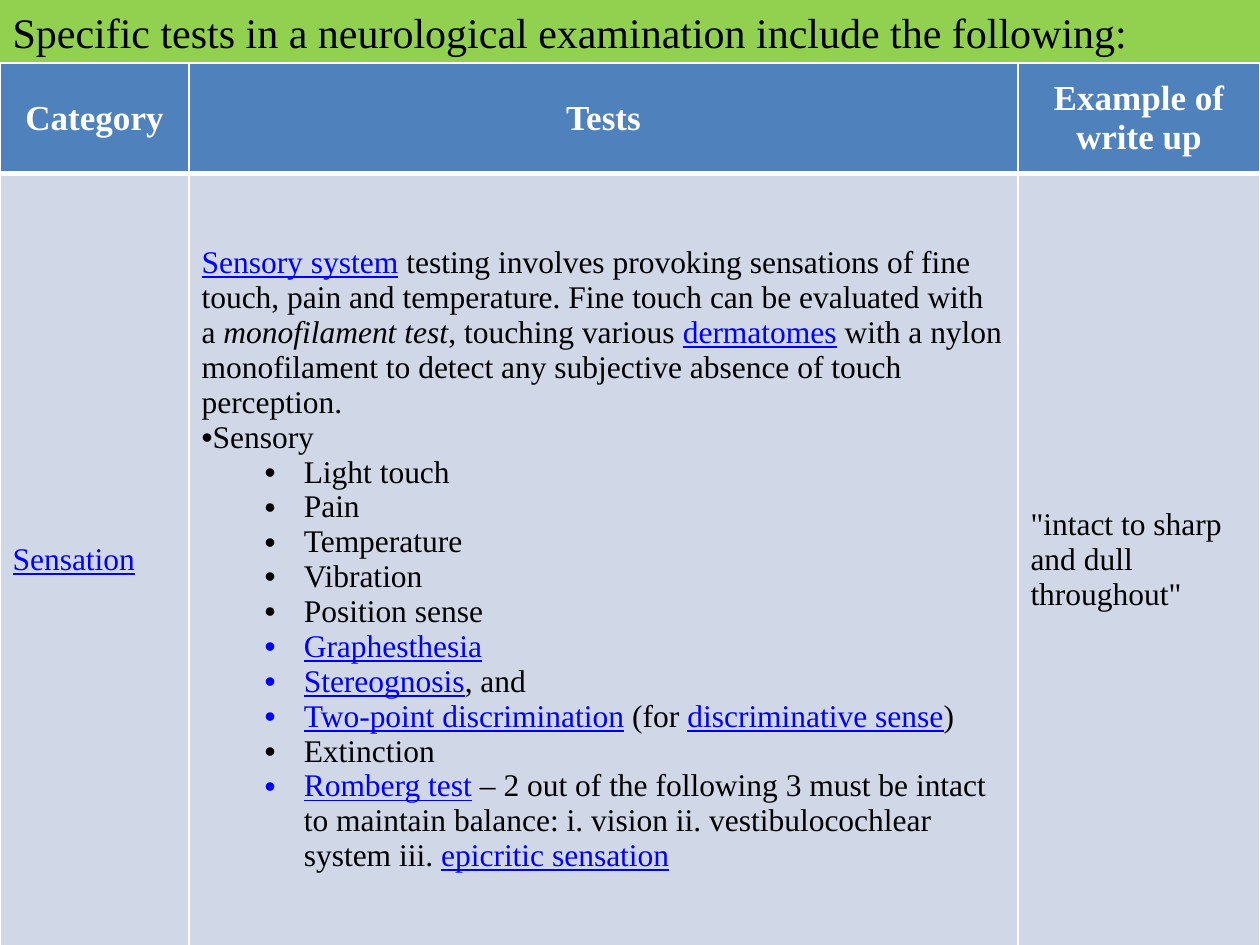
"""Build a slide with a table of sensory tests in a neurological examination."""
from dataclasses import dataclass

from lxml.etree import SubElement
from pptx import Presentation
from pptx.dml.color import RGBColor
from pptx.enum.text import MSO_ANCHOR, MSO_AUTO_SIZE, PP_ALIGN
from pptx.oxml.ns import qn
from pptx.util import Cm, Pt

FONT = "Times New Roman"
BLACK = RGBColor(0x00, 0x00, 0x00)
WHITE = RGBColor(0xFF, 0xFF, 0xFF)
GREEN = RGBColor(0x92, 0xD0, 0x50)
BLUE = RGBColor(0x4F, 0x81, 0xBD)
PALE = RGBColor(0xD0, 0xD8, 0xE8)
LINK = RGBColor(0x00, 0x00, 0xFF)


@dataclass
class Piece:
    text: str
    link: bool = False
    italic: bool = False


@dataclass
class Para:
    pieces: list[Piece]
    level: int = 0
    bullet: bool = False


def linked(text: str) -> Piece:
    return Piece(text, link=True)


def item(*pieces: Piece) -> Para:
    return Para(list(pieces), level=1, bullet=True)


def plain_items(*names: str) -> list[Para]:
    return [item(Piece(name)) for name in names]


HEADERS = ["Category", "Tests", "Example of write up"]
TESTS = [
    Para([
        linked("Sensory system"),
        Piece(" testing involves provoking sensations of fine touch, pain and "
              "temperature. Fine touch can be evaluated with a "),
        Piece("monofilament test", italic=True),
        Piece(", touching various "),
        linked("dermatomes"),
        Piece(" with a nylon monofilament to detect any subjective absence of "
              "touch perception."),
    ]),
    Para([Piece("Sensory")], bullet=True),
    *plain_items("Light touch", "Pain", "Temperature", "Vibration", "Position sense"),
    item(linked("Graphesthesia")),
    item(linked("Stereognosis"), Piece(", and")),
    item(linked("Two-point discrimination"), Piece(" (for "),
         linked("discriminative sense"), Piece(")")),
    *plain_items("Extinction"),
    item(linked("Romberg test"),
         Piece(" – 2 out of the following 3 must be intact to maintain balance: "
               "i. vision ii. vestibulocochlear system iii. "),
         linked("epicritic sensation")),
]
BODY = [
    [Para([linked("Sensation")])],
    TESTS,
    [Para([Piece('"intact to sharp and dull throughout"')])],
]


def add_text(p, text: str, *, size: int = 18, color: RGBColor = BLACK,
             bold: bool = False, italic: bool = False, underline: bool = False) -> None:
    r = p.add_run()
    r.text = text
    f = r.font
    f.name, f.size, f.bold, f.italic, f.underline = FONT, Pt(size), bold, italic, underline
    f.color.rgb = color


def add_bullet(p, level: int) -> None:
    pPr = p._p.get_or_add_pPr()
    pPr.set("marL", str(Cm(2.06) * level))
    pPr.set("indent", str(Cm(-0.79) * level))
    SubElement(pPr, qn("a:buFont"), typeface="Arial")
    SubElement(pPr, qn("a:buChar"), char="•")


def style_cell(cell, fill: RGBColor, top: int, bottom: int) -> None:
    tcPr = cell._tc.get_or_add_tcPr()
    for side, width in (("L", 1), ("R", 1), ("T", top), ("B", bottom)):
        ln = SubElement(tcPr, qn(f"a:ln{side}"), w=str(Pt(width)))
        SubElement(SubElement(ln, qn("a:solidFill")), qn("a:srgbClr"), val=str(WHITE))
    cell.fill.solid()
    cell.fill.fore_color.rgb = fill
    cell.vertical_anchor = MSO_ANCHOR.MIDDLE


def fill_body_cell(cell, paras: list[Para]) -> None:
    tf = cell.text_frame
    for i, para in enumerate(paras):
        p = tf.add_paragraph() if i else tf.paragraphs[0]
        p.level = para.level
        if para.bullet:
            add_bullet(p, para.level)
        for piece in para.pieces:
            add_text(p, piece.text, color=LINK if piece.link else BLACK,
                     italic=piece.italic, underline=piece.link)


def add_title(s, text: str) -> None:
    sp = s.shapes.title
    sp.left, sp.top, sp.width, sp.height = Cm(0), Cm(0), Cm(25.4), Cm(1.27)
    sp.fill.solid()
    sp.fill.fore_color.rgb = GREEN
    tf = sp.text_frame
    tf.auto_size = MSO_AUTO_SIZE.NONE
    tf.vertical_anchor = MSO_ANCHOR.TOP
    p = tf.paragraphs[0]
    p.alignment = PP_ALIGN.LEFT
    add_text(p, text, size=24)


def add_tests_table(s) -> None:
    table = s.shapes.add_table(2, 3, Cm(0), Cm(1.27), Cm(25.4), Cm(17.78)).table
    for column, width in zip(table.columns, (3.81, 16.71, 4.88)):
        column.width = Cm(width)
    for row, height in zip(table.rows, (2.23, 15.56)):
        row.height = Cm(height)
    for col, (header, paras) in enumerate(zip(HEADERS, BODY)):
        head, body = table.cell(0, col), table.cell(1, col)
        style_cell(head, BLUE, top=1, bottom=3)
        style_cell(body, PALE, top=3, bottom=1)
        p = head.text_frame.paragraphs[0]
        p.alignment = PP_ALIGN.CENTER
        add_text(p, header, size=20, color=WHITE, bold=True)
        fill_body_cell(body, paras)


def main() -> None:
    prs = Presentation()
    prs.slide_width, prs.slide_height = Cm(25.4), Cm(19.05)
    s = prs.slides.add_slide(prs.slide_layouts[5])
    add_title(s, "Specific tests in a neurological examination include the following:")
    add_tests_table(s)
    prs.save("out.pptx")


if __name__ == "__main__":
    main()
